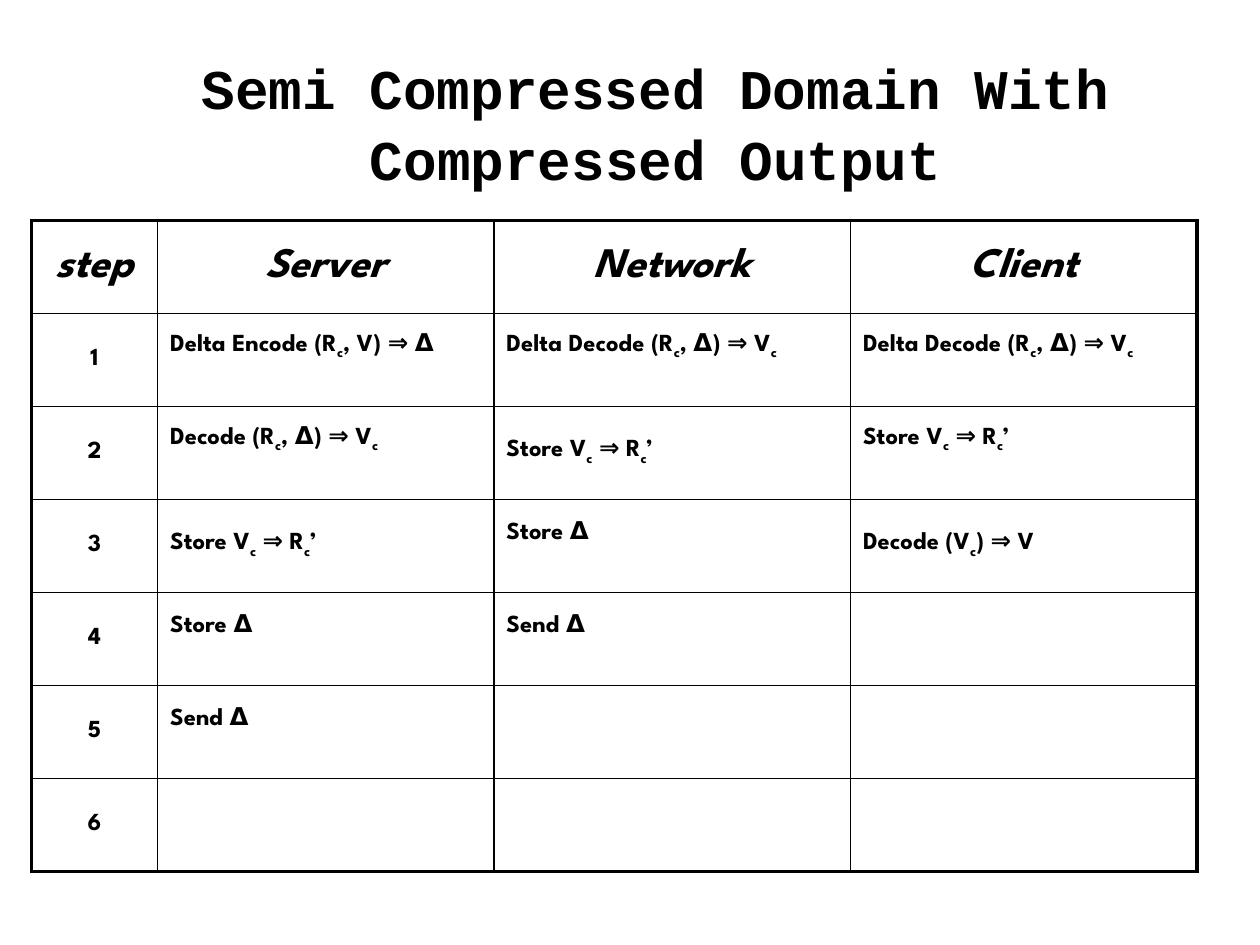
from lxml.etree import SubElement
from pptx import Presentation
from pptx.dml.color import RGBColor
from pptx.enum.text import MSO_ANCHOR as Anchor, PP_ALIGN as Align
from pptx.oxml.ns import qn
from pptx.util import Inches, Pt

BLACK = RGBColor(0, 0, 0)
HEADINGS = ["step", "Server", "Network", "Client"]
STORE_DECODED = "Store V_c_ ⇒ R_c_’"
DELTA_DECODE = "Delta Decode (R_c_, Δ) ⇒ V_c_"
STEPS = [
    ["Delta Encode (R_c_, V) ⇒ Δ", DELTA_DECODE, DELTA_DECODE],
    ["Decode (R_c_, Δ) ⇒ V_c_", STORE_DECODED, STORE_DECODED],
    [STORE_DECODED, "Store Δ", "Decode (V_c_) ⇒ V"],
    ["Store Δ", "Send Δ", ""],
    ["Send Δ", "", ""],
    ["", "", ""],
]
CENTERED_STEPS = {(2, 2), (3, 1), (3, 3)}


class SlideBuilder:
    title_font = "Courier New"
    body_font = "League Spartan"
    outer_line = 2.25
    inner_line = 1

    def __init__(self, presentation):
        self.width = presentation.slide_width
        self.height = presentation.slide_height
        self.slide = presentation.slides.add_slide(presentation.slide_layouts[6])

    def place(self, left, top, width, height):
        return (round(left * self.width), round(top * self.height),
                round(width * self.width), round(height * self.height))

    def style(self, font, name, size, italic=False):
        font.name = name
        font.size = Pt(size)
        font.bold = True
        font.italic = italic
        font.color.rgb = BLACK

    def title(self, text, *box):
        shape = self.slide.shapes.add_textbox(*self.place(*box))
        text_frame = shape.text_frame
        text_frame.word_wrap = True
        text_frame.vertical_anchor = Anchor.MIDDLE
        text_frame.text = text
        paragraph = text_frame.paragraphs[0]
        paragraph.alignment = Align.CENTER
        paragraph.line_spacing = 1.05
        self.style(paragraph.runs[0].font, self.title_font, 32)

    def table(self, rows, column_shares, *box):
        left, top, width, height = self.place(*box)
        row_count, column_count = len(rows), len(column_shares)
        table = self.slide.shapes.add_table(
            row_count, column_count, left, top, width, height).table
        table.first_row = table.horz_banding = False
        for column, share in zip(table.columns, column_shares):
            column.width = round(width * share / sum(column_shares))
        for row in table.rows:
            row.height = round(height / row_count)
        for row, texts in enumerate(rows):
            for column, text in enumerate(texts):
                cell = table.cell(row, column)
                self.borders(cell, {
                    "L": column == 0, "R": column == column_count - 1,
                    "T": row == 0, "B": row == row_count - 1})
                cell.fill.background()
                cell.vertical_anchor = Anchor.MIDDLE
                raised = row and column and (row, column) not in CENTERED_STEPS
                cell.margin_bottom = Inches(0.25 if raised else 0.05)
                self.cell_text(cell, text, row == 0, row == 0 or column == 0)

    def cell_text(self, cell, text, heading, centered):
        paragraph = cell.text_frame.paragraphs[0]
        paragraph.alignment = Align.CENTER if centered else Align.LEFT
        size = 24 if heading else 14
        for index, part in enumerate(text.split("_")):
            if part:
                run = paragraph.add_run()
                run.text = part
                self.style(run.font, self.body_font, size, heading)
                if index % 2:
                    run._r.get_or_add_rPr().set("baseline", "-25000")

    def borders(self, cell, outer_sides):
        properties = cell._tc.get_or_add_tcPr()
        for side, outer in outer_sides.items():
            points = self.outer_line if outer else self.inner_line
            line = SubElement(properties, qn(f"a:ln{side}"), w=str(Pt(points)))
            fill = SubElement(line, qn("a:solidFill"))
            SubElement(fill, qn("a:srgbClr"), val=str(BLACK))


def main():
    presentation = Presentation()
    presentation.slide_width = Inches(10)
    presentation.slide_height = Inches(7.5)
    builder = SlideBuilder(presentation)
    builder.title("Semi Compressed Domain With Compressed Output",
                  0.133, 0.056, 0.775, 0.144)
    rows = [HEADINGS] + [[str(number), *actions]
                         for number, actions in enumerate(STEPS, 1)]
    builder.table(rows, [1, 2.67, 2.83, 2.75], 0.025, 0.2333, 0.925, 0.689)
    presentation.save("out.pptx")


if __name__ == "__main__":
    main()
